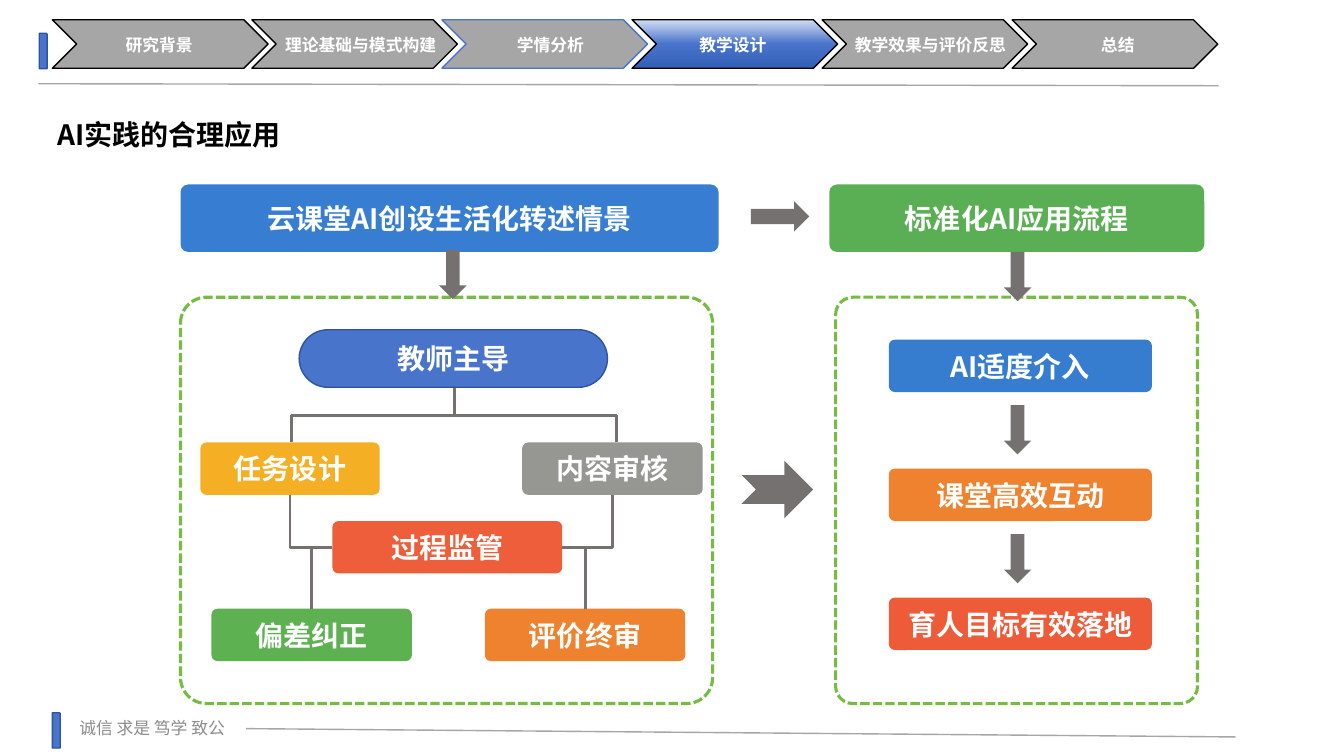
from copy import deepcopy
from dataclasses import dataclass

import lxml.etree
import pptx
import pptx.dml.color
import pptx.enum.dml
import pptx.enum.shapes
import pptx.enum.text
import pptx.oxml.ns
import pptx.util

Cm = pptx.util.Cm
Pt = pptx.util.Pt
qn = pptx.oxml.ns.qn
SHAPE = pptx.enum.shapes.MSO_SHAPE
CONNECTOR = pptx.enum.shapes.MSO_CONNECTOR
ALIGN = pptx.enum.text.PP_ALIGN
ANCHOR = pptx.enum.text.MSO_ANCHOR

CJK = "Noto Sans CJK SC"
BLUE, NAVY, GRAY, DARK = "4874CB", "2E54A1", "A6A6A6", "767171"
BLACK, WHITE, GREEN = "000000", "FFFFFF", "75BD42"
NODE_H = 1.32
LEFT, BOTTOM, RIGHT, TOP = 1, 2, 3, 0


@dataclass
class Box:
    x: float
    y: float
    w: float
    h: float
    fill: str | None = None
    line: str | None = None
    width: float = 1
    kind: SHAPE = SHAPE.ROUNDED_RECTANGLE
    adj: tuple[float, ...] = ()
    rotation: float = 0


@dataclass
class Node:
    text: str
    box: Box


@dataclass
class Tab:
    text: str
    x: float
    w: float
    label_x: float
    line: str = BLACK


@dataclass
class Elbow:
    side: int
    target: str
    target_side: int


def rgb(value: str) -> pptx.dml.color.RGBColor:
    return pptx.dml.color.RGBColor.from_string(value)


def write(sp, text: str, size: float, color: str, font: str = CJK,
          bold: bool = True, align: ALIGN = ALIGN.CENTER):
    tf = sp.text_frame
    tf.word_wrap = True
    p = tf.paragraphs[0]
    p.alignment = align
    p.add_run().text = text
    p.font.size = Pt(size)
    p.font.bold = bold
    p.font.name = font
    p.font.color.rgb = rgb(color)
    for props in sp.element.iter(qn("a:defRPr")):
        lxml.etree.SubElement(props, qn("a:ea")).set("typeface", CJK)
    return p


def draw_box(s, b: Box):
    sp = s.shapes.add_shape(b.kind, Cm(b.x), Cm(b.y), Cm(b.w), Cm(b.h))
    sp.shadow.inherit = False
    sp.rotation = b.rotation
    for i, value in enumerate(b.adj):
        sp.adjustments[i] = value
    if b.fill:
        sp.fill.solid()
        sp.fill.fore_color.rgb = rgb(b.fill)
    else:
        sp.fill.background()
    if b.line:
        sp.line.color.rgb = rgb(b.line)
        sp.line.width = Pt(b.width)
    else:
        sp.line.fill.background()
    return sp


def draw_node(s, node: Node):
    sp = draw_box(s, node.box)
    sp.text_frame.vertical_anchor = ANCHOR.MIDDLE
    write(sp, node.text, 20, WHITE)
    return sp


def draw_text(s, x: float, y: float, w: float, h: float, *args, **kwargs):
    return write(s.shapes.add_textbox(Cm(x), Cm(y), Cm(w), Cm(h)), *args, **kwargs)


def draw_connector(s, kind: CONNECTOR, color: str, width: float,
                   x1: float = 0, y1: float = 0, x2: float = 0, y2: float = 0):
    c = s.shapes.add_connector(kind, Cm(x1), Cm(y1), Cm(x2), Cm(y2))
    c.line.color.rgb = rgb(color)
    c.line.width = Pt(width)
    lxml.etree.SubElement(c.element.spPr, qn("a:effectLst"))
    return c


def draw_elbow(s, source, side: int, target, target_side: int) -> None:
    c = draw_connector(s, CONNECTOR.ELBOW, DARK, 2)
    c.element.spPr.find(qn("a:prstGeom")).set("prst", "bentConnector2")
    c.begin_connect(source, side)
    c.end_connect(target, target_side)


def fill_gradient(sp, colors: tuple[str, ...]) -> None:
    sp.fill.gradient()
    sp.fill.gradient_angle = 270
    stop_list = sp.element.spPr.find(".//" + qn("a:gsLst"))
    stop_list.append(deepcopy(stop_list[0]))
    for i, (stop, color) in enumerate(zip(sp.fill.gradient_stops, colors)):
        stop.color.rgb = rgb(color)
        stop.position = i / (len(colors) - 1)


def node(text: str, x: float, y: float, w: float, fill: str, h: float = NODE_H) -> Node:
    return Node(text, Box(x, y, w, h, fill, adj=(0.113,)))


def down_arrow(x: float, y: float) -> Box:
    return Box(x, y, 0.69, 1.24, DARK, kind=SHAPE.DOWN_ARROW)


ACTIVE = "教学设计"
TAB_X = [6.35 + 4.79 * i for i in range(5)]
TABS = [
    Tab("研究背景", 1.32, 5.44, 1.85),
    Tab("理论基础与模式构建", TAB_X[0], 5.18, 6.93),
    Tab("学情分析", TAB_X[1], 5.18, 11.71, BLUE),
    Tab(ACTIVE, TAB_X[2], 5.18, 16.31),
    Tab("教学效果与评价反思", TAB_X[3], 5.18, 21.29),
    Tab("总结", TAB_X[4], 5.18, 26.01),
]
FRAMES = [
    Box(4.55, 7.49, 13.41, 10.24, None, GREEN, 2.25, adj=(0.064,)),
    Box(21.06, 7.49, 9.12, 10.24, None, GREEN, 2.25, adj=(0.048,)),
]
BRACE = Box(10.77, 6.38, 1.35, 8.18, None, DARK, 2, SHAPE.LEFT_BRACE, (0, 0.5), 90)
STEPS = [("AI适度介入", "367CCF"), ("课堂高效互动", "EE822F"), ("育人目标有效落地", "ED5B39")]
MONITOR = "过程监管"
NODES = [
    node("云课堂AI创设生活化转述情景", 4.55, 4.65, 13.56, "377DD1", 1.7),
    node("标准化AI应用流程", 20.9, 4.65, 9.45, "5AAF54", 1.7),
    Node("教师主导", Box(7.54, 8.31, 7.77, 1.45, BLUE, NAVY, adj=(0.5,))),
    node("任务设计", 5.05, 11.15, 4.52, "F5AF25"),
    node("内容审核", 13.16, 11.15, 4.55, "969693"),
    node(MONITOR, 8.38, 13.13, 5.79, "EE5E3B"),
    node("偏差纠正", 5.33, 15.34, 5.05, "5DB151"),
    node("评价终审", 12.22, 15.34, 5.05, "EE822F"),
    *[node(text, 22.4, 8.56 + 3.25 * i, 6.63, fill) for i, (text, fill) in enumerate(STEPS)],
]
ELBOWS = [
    Elbow(LEFT, "任务设计", BOTTOM),
    Elbow(RIGHT, "内容审核", BOTTOM),
    Elbow(LEFT, "偏差纠正", TOP),
    Elbow(RIGHT, "评价终审", TOP),
]
ARROWS = [
    down_arrow(11.07, 6.3),
    *[down_arrow(25.3, y) for y in (6.35, 10.21, 13.46)],
    Box(18.69, 11.61, 1.8, 1.45, DARK, kind=SHAPE.NOTCHED_RIGHT_ARROW),
    Box(19.28, 4.72, 0.76, 1.47, DARK, kind=SHAPE.DOWN_ARROW, rotation=270),
]


def main() -> None:
    prs = pptx.Presentation()
    prs.slide_width, prs.slide_height = Cm(33.87), Cm(19.05)
    s = prs.slides.add_slide(prs.slide_layouts[6])

    for x, y in ((0.99, 0.84), (1.32, 17.96)):
        draw_box(s, Box(x, y, 0.2, 0.89, BLUE, NAVY, kind=SHAPE.ROUND_1_RECTANGLE))
    for tab in TABS:
        sp = draw_box(s, Box(tab.x, 0.5, tab.w, 1.22, GRAY, tab.line, kind=SHAPE.CHEVRON))
        if tab.text == ACTIVE:
            fill_gradient(sp, ("D1DCF2", BLUE, "345FB6"))
    for tab in TABS:
        draw_text(s, tab.label_x, 0.74, 4.32, 0.76, tab.text, 12, WHITE, "Arial")
    for ends in ((0.97, 2.11, 30.71, 2.16), (6.2, 18.36, 31.14, 18.57)):
        draw_connector(s, CONNECTOR.STRAIGHT, GRAY, 1, *ends)
    draw_text(s, 1.75, 17.96, 7.37, 0.76, "诚信 求是 笃学 致公", 12, "8C8C8C", "Arial",
              bold=False, align=ALIGN.LEFT)
    title = draw_text(s, 1.19, 2.41, 29.51, 1.52, "AI实践的合理应用", 20, BLACK, align=ALIGN.LEFT)
    title.line_spacing = 1.5

    for frame in FRAMES:
        draw_box(s, frame).line.dash_style = pptx.enum.dml.MSO_LINE.SQUARE_DOT
    draw_box(s, BRACE)
    drawn = {n.text: draw_node(s, n) for n in NODES}
    for e in ELBOWS:
        draw_elbow(s, drawn[MONITOR], e.side, drawn[e.target], e.target_side)
    for arrow in ARROWS:
        draw_box(s, arrow)
    prs.save("out.pptx")


if __name__ == "__main__":
    main()
